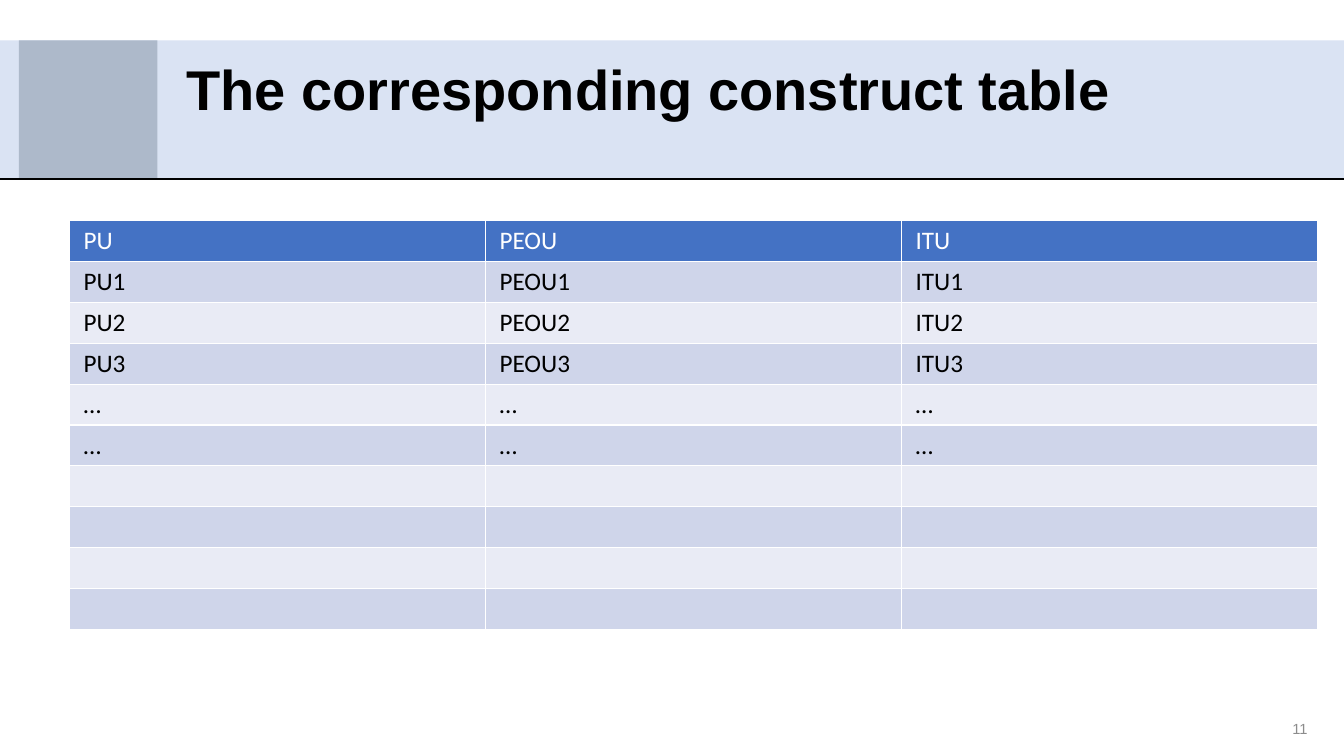
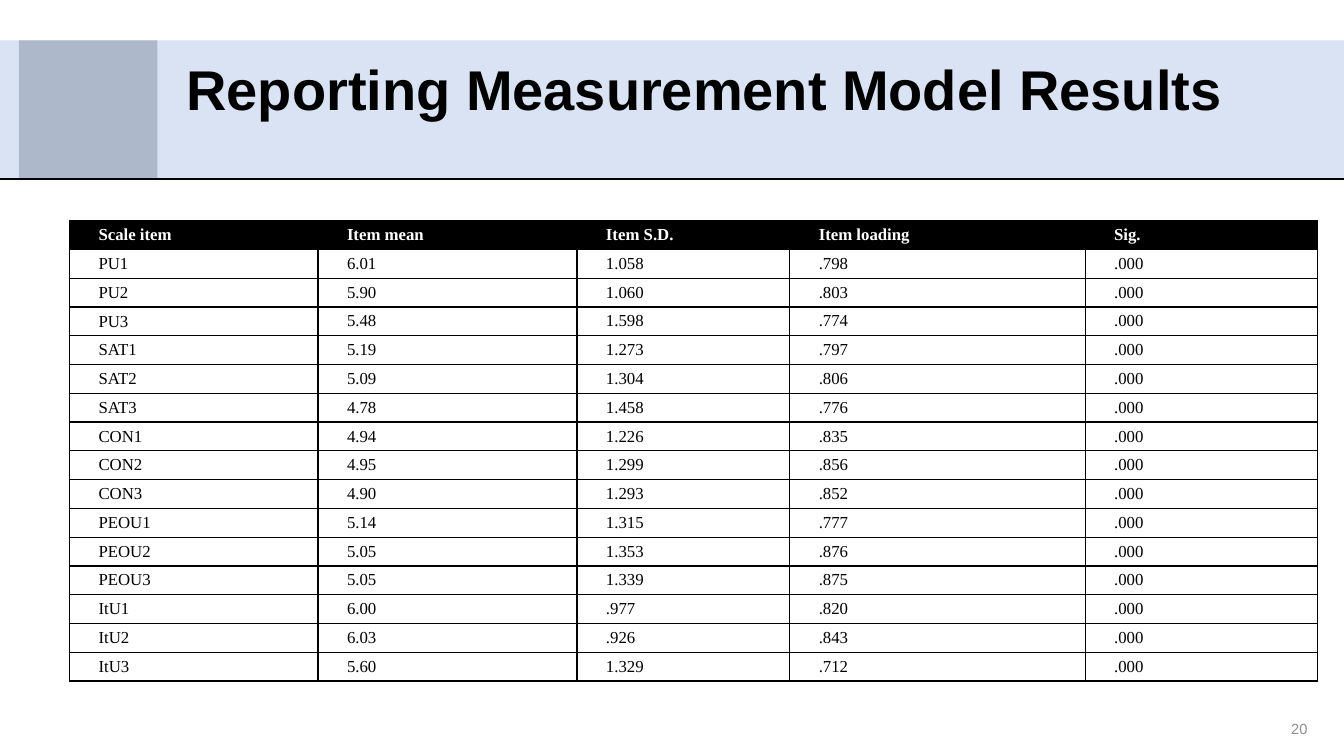
from dataclasses import dataclass

from lxml.etree import SubElement
from pptx import Presentation
from pptx.dml.color import RGBColor
from pptx.enum.shapes import MSO_CONNECTOR as Connector, MSO_SHAPE as Preset
from pptx.enum.text import MSO_ANCHOR as Anchor, PP_ALIGN as Align
from pptx.oxml.ns import qn
from pptx.util import Pt

CONSTRUCTS = ["PU", "PEOU", "ITU"]
CONSTRUCT_ROWS = [
    CONSTRUCTS,
    *[[f"{name}{number}" for name in CONSTRUCTS] for number in (1, 2, 3)],
    *[["…"] * 3] * 2,
    *[[""] * 3] * 4,
]
RESULT_ROWS = [
    ("Scale item", "Item mean", "Item S.D.", "Item loading", "Sig."),
    ("PU1", "6.01", "1.058", ".798", ".000"),
    ("PU2", "5.90", "1.060", ".803", ".000"),
    ("PU3", "5.48", "1.598", ".774", ".000"),
    ("SAT1", "5.19", "1.273", ".797", ".000"),
    ("SAT2", "5.09", "1.304", ".806", ".000"),
    ("SAT3", "4.78", "1.458", ".776", ".000"),
    ("CON1", "4.94", "1.226", ".835", ".000"),
    ("CON2", "4.95", "1.299", ".856", ".000"),
    ("CON3", "4.90", "1.293", ".852", ".000"),
    ("PEOU1", "5.14", "1.315", ".777", ".000"),
    ("PEOU2", "5.05", "1.353", ".876", ".000"),
    ("PEOU3", "5.05", "1.339", ".875", ".000"),
    ("ItU1", "6.00", ".977", ".820", ".000"),
    ("ItU2", "6.03", ".926", ".843", ".000"),
    ("ItU3", "5.60", "1.329", ".712", ".000"),
]


@dataclass(frozen=True)
class Theme:
    black: str = "000000"
    white: str = "FFFFFF"
    band: str = "DAE3F3"
    block: str = "ADB9CA"
    number: str = "8C8C8C"
    font: str = "Arial"
    title_size: float = 40
    number_size: float = 10.5


@dataclass(frozen=True)
class TableStyle:
    font: str
    size: float
    header: str
    stripes: tuple
    border: str
    inset: float
    row_height: float
    align: Align
    first_column_anchor: Anchor


THEME = Theme()
STRIPED = TableStyle("Calibri", 18, "4472C4", ("CFD5EA", "E9EBF5"), THEME.white,
                     10, 29.2, Align.LEFT, Anchor.TOP)
RULED = TableStyle("Times New Roman", 12, THEME.black, (THEME.white,), THEME.black,
                   20.7, 20.5, Align.JUSTIFY, Anchor.MIDDLE)

PAGE_WIDTH, PAGE_HEIGHT = 960, 540
BAND_TOP, BAND_HEIGHT = 28.8, 99
BAND_BOTTOM = BAND_TOP + BAND_HEIGHT
TABLE_LEFT, TABLE_TOP, TABLE_WIDTH = 49.7, 157.6, 891.5

SLIDES = [
    dict(title="The corresponding construct table", number=11, rows=CONSTRUCT_ROWS,
         widths=[TABLE_WIDTH / 3] * 3, style=STRIPED),
    dict(title="Reporting Measurement Model Results", number=20, rows=RESULT_ROWS,
         widths=[177.5, 185, 152, 211, 166], style=RULED),
]


def color(code):
    return RGBColor.from_string(code)


def write(frame, text, *, font=THEME.font, size, ink=THEME.black, bold=False,
          align=Align.LEFT, anchor=Anchor.MIDDLE):
    frame.word_wrap = True
    frame.vertical_anchor = anchor
    para = frame.paragraphs[0]
    para.alignment = align
    para.font.size = Pt(size)
    if text:
        span = para.add_run()
        span.text = text
        span.font.name, span.font.size, span.font.bold = font, Pt(size), bold
        span.font.color.rgb = color(ink)


def add_block(page, left, width, fill):
    block = page.shapes.add_shape(Preset.RECTANGLE, Pt(left), Pt(BAND_TOP),
                                  Pt(width), Pt(BAND_HEIGHT))
    block.shadow.inherit = False
    block.fill.solid()
    block.fill.fore_color.rgb = color(fill)
    block.line.fill.background()
    return block


def add_rule(page):
    rule = page.shapes.add_connector(Connector.STRAIGHT, Pt(0), Pt(BAND_BOTTOM),
                                     Pt(PAGE_WIDTH), Pt(BAND_BOTTOM))
    rule.line.color.rgb = color(THEME.black)
    rule.line.width = Pt(1.5)
    SubElement(rule._element.spPr, qn("a:effectLst"))
    return rule


def decorate_layout(layout, page):
    """Draw the title band on a page, then move it to the back of its layout."""
    parts = [add_block(page, 0, PAGE_WIDTH, THEME.band),
             add_block(page, 13.5, BAND_HEIGHT, THEME.block),
             add_rule(page)]
    for position, part in enumerate(parts, start=2):
        layout.shapes._spTree.insert(position, part._element)


def set_borders(cell, code):
    properties = cell._tc.get_or_add_tcPr()
    for side in ("lnL", "lnR", "lnT", "lnB"):
        line = SubElement(properties, qn(f"a:{side}"), w=str(Pt(1)))
        fill = SubElement(line, qn("a:solidFill"))
        SubElement(fill, qn("a:srgbClr"), val=code)


def add_data_table(page, rows, widths, style):
    table = page.shapes.add_table(
        len(rows), len(widths), Pt(TABLE_LEFT), Pt(TABLE_TOP),
        Pt(TABLE_WIDTH), Pt(style.row_height * len(rows))).table
    for column, width in zip(table.columns, widths):
        column.width = Pt(width)
    for row_index, values in enumerate(rows):
        table.rows[row_index].height = Pt(style.row_height)
        is_header = row_index == 0
        stripe = style.stripes[(row_index - 1) % len(style.stripes)]
        for column_index, value in enumerate(values):
            cell = table.cell(row_index, column_index)
            set_borders(cell, style.border)
            cell.fill.solid()
            cell.fill.fore_color.rgb = color(style.header if is_header else stripe)
            cell.margin_left = cell.margin_right = Pt(style.inset)
            cell.margin_top = cell.margin_bottom = Pt(3.6)
            write(cell.text_frame, value, font=style.font, size=style.size,
                  ink=THEME.white if is_header else THEME.black,
                  bold=is_header and style is RULED, align=style.align)
            in_first_column = column_index == 0 and not is_header
            cell.vertical_anchor = style.first_column_anchor if in_first_column else Anchor.TOP


def add_page(deck, layout, title, number, rows, widths, style):
    page = deck.slides.add_slide(layout)
    write(page.shapes.title.text_frame, title, size=THEME.title_size, bold=True)
    add_data_table(page, rows, widths, style)
    number_box = page.shapes.add_textbox(Pt(813.6), Pt(511.2), Pt(127.4), Pt(18))
    write(number_box.text_frame, str(number), size=THEME.number_size,
          ink=THEME.number, align=Align.RIGHT)
    return page


def main():
    deck = Presentation()
    deck.slide_width, deck.slide_height = Pt(PAGE_WIDTH), Pt(PAGE_HEIGHT)
    layout = deck.slide_layouts.get_by_name("Title Only")
    title = layout.placeholders[0]
    title.left, title.top, title.width, title.height = Pt(126), Pt(BAND_TOP), Pt(834), Pt(68.4)
    pages = [add_page(deck, layout, **content) for content in SLIDES]
    decorate_layout(layout, pages[0])
    deck.save("out.pptx")


if __name__ == "__main__":
    main()
